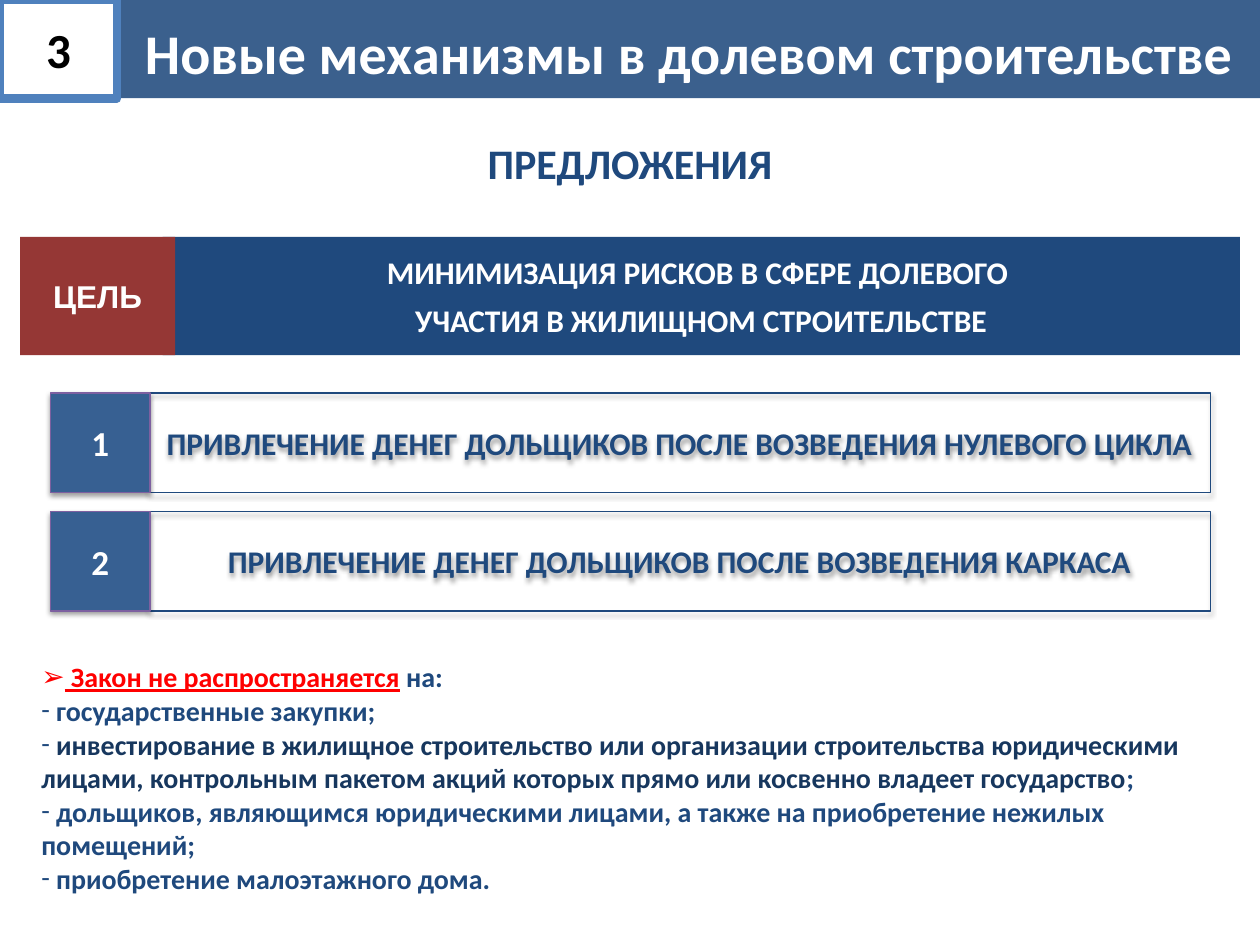
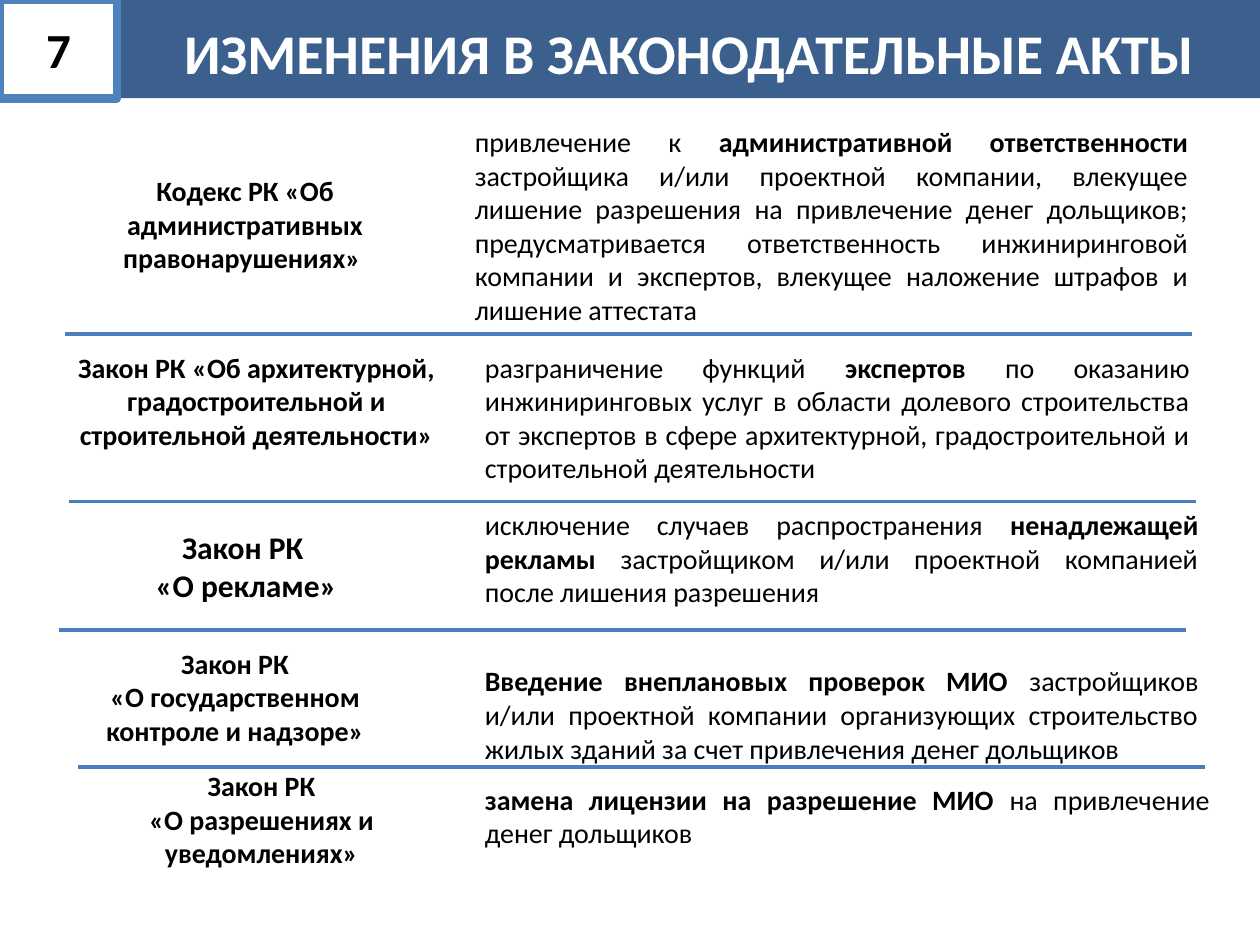
"""Build two slides on shared-equity housing rules."""
from lxml.etree import SubElement
from pptx import Presentation
from pptx.dml.color import RGBColor
from pptx.enum.shapes import MSO_CONNECTOR, MSO_SHAPE
from pptx.enum.text import MSO_ANCHOR, MSO_AUTO_SIZE, PP_ALIGN
from pptx.oxml.ns import qn
from pptx.util import Inches, Pt

HUES = {
    "navy": "1F497D", "deep": "17375E", "steel": "376092", "brick": "953735",
    "edge": "4F81BD", "rule": "4B7EBC", "plum": "7D60A0", "red": "FF0000",
    "white": "FFFFFF", "black": "000000",
}
MID = {"alignment": PP_ALIGN.CENTER}
LEFT = {"alignment": PP_ALIGN.LEFT}
FULL = {"alignment": PP_ALIGN.JUSTIFY}
HEAD = {**MID, "line_spacing": 1.1, "space_after": Pt(9)}
LOOSE = {**MID, "space_after": Pt(6)}
BOLD = {"bold": True}
PLAIN = {"bold": False}

GOAL = ["МИНИМИЗАЦИЯ РИСКОВ В СФЕРЕ ДОЛЕВОГО ", "УЧАСТИЯ В ЖИЛИЩНОМ СТРОИТЕЛЬСТВЕ"]
STEPS = [
    "ПРИВЛЕЧЕНИЕ ДЕНЕГ ДОЛЬЩИКОВ ПОСЛЕ ВОЗВЕДЕНИЯ НУЛЕВОГО ЦИКЛА",
    "ПРИВЛЕЧЕНИЕ ДЕНЕГ ДОЛЬЩИКОВ ПОСЛЕ ВОЗВЕДЕНИЯ КАРКАСА",
]
LIMITS = [
    [(" Закон не распространяется", {"hue": "red", "underline": True}), (" на:", {})],
    " государственные закупки;",
    [(" ", {}),
     ("инвестирование в жилищное строительство или организации строительства "
      "юридическими лицами, контрольным пакетом акций которых прямо или косвенно "
      "владеет государство", {"hue": "deep"}),
     (";", {})],
    " дольщиков, являющимся юридическими лицами, а также на приобретение нежилых помещений;",
    " приобретение малоэтажного дома.",
]
ACTS = [
    {"act": ["Кодекс РК «Об административных правонарушениях» "],
     "at": (0.47, 1.33, 2.95, 0.91), "size": 16,
     "text": [("привлечение к ", PLAIN), ("административной ответственности ", BOLD),
              ("застройщика и/или проектной компании, влекущее лишение разрешения на "
               "привлечение денег дольщиков; предусматривается ответственность "
               "инжиниринговой компании и экспертов, влекущее наложение штрафов и "
               "лишение аттестата", PLAIN)],
     "box": (3.67, 0.94, 5.86, 1.72)},
    {"act": ["Закон РК «Об архитектурной, градостроительной и строительной деятельности»"],
     "at": (0.47, 2.73, 3.13, 0.91), "size": 16,
     "text": [("разграничение функций ", PLAIN), ("экспертов", BOLD),
              (" по оказанию инжиниринговых услуг в области долевого строительства "
               "от экспертов в сфере архитектурной, градостроительной и строительной "
               "деятельности", PLAIN)],
     "box": (3.75, 2.73, 5.79, 1.18)},
    {"act": ["Закон РК ", "«О рекламе»"],
     "at": (0.47, 4.14, 2.97, 0.71), "size": 18,
     "text": [("исключение случаев распространения ", PLAIN),
              ("ненадлежащей рекламы", BOLD),
              (" застройщиком и/или проектной компанией после лишения разрешения ", PLAIN)],
     "box": (3.75, 3.98, 5.86, 0.91)},
    {"act": ["Закон РК", "«О государственном контроле и надзоре»"],
     "at": (0.39, 5.08, 2.95, 1.18), "size": 16,
     "text": [("Введение внеплановых проверок МИО ", BOLD),
              ("застройщиков и/или проектной компании организующих строительство "
               "жилых зданий за счет привлечения денег дольщиков", PLAIN)],
     "box": (3.75, 5.22, 5.86, 0.91)},
    {"act": ["Закон РК", "«О разрешениях и уведомлениях»"],
     "at": (0.6, 6.05, 2.95, 0.91), "size": 16,
     "text": [("замена лицензии на разрешение МИО", BOLD),
              (" на привлечение денег дольщиков ", PLAIN)],
     "box": (3.75, 6.16, 5.95, 0.64)},
]
RULES = [(0.52, 2.65), (0.55, 3.98), (0.47, 5), (0.62, 6.09)]
SPAN = 8.94


def tint(name):
    return RGBColor.from_string(HUES[name])


def assign(item, look):
    for key, value in look.items():
        setattr(item, key, value)


def write(shape, paras, size, hue, form=MID, anchor=MSO_ANCHOR.MIDDLE, face="Calibri"):
    frame = shape.text_frame
    assign(frame, {"word_wrap": True, "auto_size": MSO_AUTO_SIZE.NONE,
                   "vertical_anchor": anchor})
    for num, runs in enumerate(paras):
        para = frame.add_paragraph() if num else frame.paragraphs[0]
        assign(para, form)
        for text, extra in [(runs, {})] if isinstance(runs, str) else runs:
            look = {"name": face, "size": Pt(size), "bold": True, "hue": hue, **extra}
            run = para.add_run()
            run.text = text
            run.font.color.rgb = tint(look.pop("hue"))
            assign(run.font, look)
    return shape


def note(slide, spot, *args, **opts):
    return write(slide.shapes.add_textbox(*map(Inches, spot)), *args, **opts)


def block(slide, spot, fill=None, line=None, width=0.75, shade=False):
    shape = slide.shapes.add_shape(MSO_SHAPE.RECTANGLE, *map(Inches, spot))
    shape.shadow.inherit = False
    if fill:
        shape.fill.solid()
        shape.fill.fore_color.rgb = tint(fill)
    else:
        shape.fill.background()
    if line:
        shape.line.color.rgb = tint(line)
        shape.line.width = Pt(width)
    else:
        shape.line.fill.background()
    if shade:
        list_ = shape._element.spPr.find(qn("a:effectLst"))
        cast = SubElement(list_, qn("a:outerShdw"), blurRad=str(Pt(3.1)),
                          dist=str(Pt(1.6)), dir="5400000", rotWithShape="0")
        color = SubElement(cast, qn("a:srgbClr"), val=HUES["black"])
        SubElement(color, qn("a:alpha"), val="38000")
    return shape


def start(deck, title, page):
    slide = deck.slides.add_slide(deck.slide_layouts[5])
    band = slide.shapes.title
    assign(band, dict(zip(("left", "top", "width", "height"),
                          map(Inches, (0.94, 0, 9.06, 0.78)))))
    band.fill.solid()
    band.fill.fore_color.rgb = tint("navy")
    color = band._element.spPr.find(qn("a:solidFill"))[0]
    SubElement(color, qn("a:alpha"), val="87000")
    write(band, [title], 32, "white", HEAD)
    write(block(slide, (0, 0, 0.93, 0.78), line="edge", width=5), [page], 28, "black")
    return slide


def offer(deck):
    slide = start(deck, "Новые механизмы в долевом строительстве", "3")
    note(slide, (0, 0.86, 10, 0.86), ["ПРЕДЛОЖЕНИЯ"], 24, "navy")
    write(block(slide, (1.29, 1.88, 8.55, 0.94), "navy"), GOAL, 18, "white", LOOSE)
    write(block(slide, (0.16, 1.88, 1.23, 0.94), "brick"), ["ЦЕЛЬ"], 18, "white", face="Arial")
    for num, step in enumerate(STEPS):
        top = 3.12 + 0.94 * num
        write(block(slide, (1.18, top, 8.43, 0.79), line="navy", shade=True),
              [step], 18, "navy")
        write(block(slide, (0.4, top, 0.79, 0.79), "steel", "plum", shade=True),
              [str(num + 1)], 20, "white")
    box = note(slide, (0.23, 5.23, 9.45, 1.88), LIMITS, 16, "navy", LEFT)
    for num, para in enumerate(box.text_frame.paragraphs):
        form = para._p.get_or_add_pPr()
        SubElement(form, qn("a:buFont"), typeface="Calibri")
        SubElement(form, qn("a:buChar"), char="-" if num else "➢")


def acts(deck):
    slide = start(deck, "ИЗМЕНЕНИЯ В ЗАКОНОДАТЕЛЬНЫЕ АКТЫ", "7")
    for row in ACTS:
        note(slide, row["at"], row["act"], row["size"], "black", anchor=MSO_ANCHOR.TOP)
        note(slide, row["box"], [row["text"]], 16, "black", FULL, MSO_ANCHOR.TOP)
    for left, top in RULES:
        rule = slide.shapes.add_connector(
            MSO_CONNECTOR.STRAIGHT, *map(Inches, (left, top, left + SPAN, top)))
        rule.line.color.rgb = tint("rule")
        rule.line.width = Pt(2.25)
        SubElement(rule._element.spPr, qn("a:effectLst"))


def main():
    deck = Presentation()
    assign(deck, {"slide_width": Inches(10), "slide_height": Inches(7.5)})
    offer(deck)
    acts(deck)
    deck.save("out.pptx")


if __name__ == "__main__":
    main()
